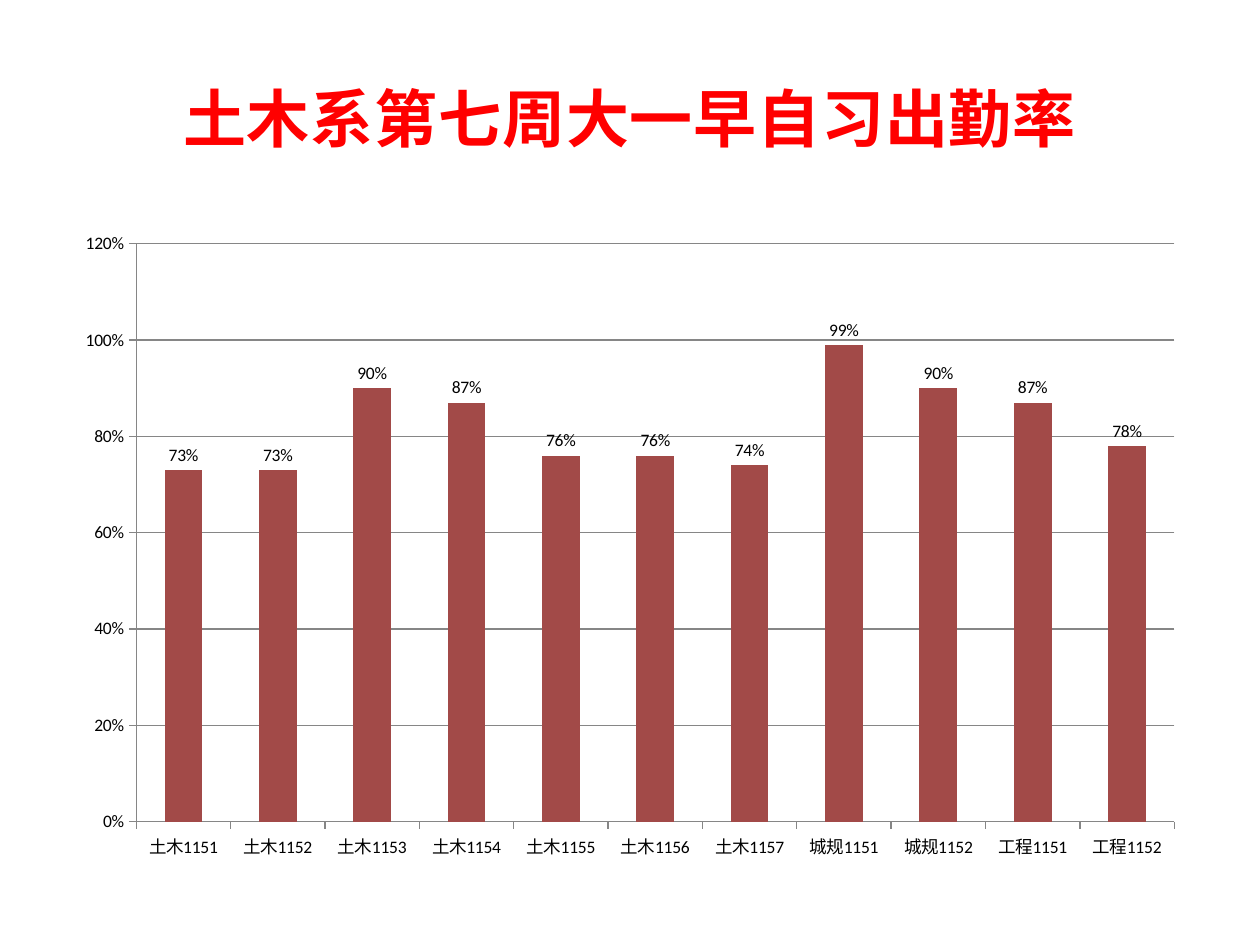
from dataclasses import dataclass

from pptx import Presentation
from pptx import util as u
from pptx.chart.data import CategoryChartData
from pptx.dml.color import RGBColor
from pptx.enum import chart as ch, text

SCALE = u.Inches(1) / 126


@dataclass(frozen=True)
class Theme:
    title: str = "FF0000"
    bar: str = "A24A48"
    grid: str = "868686"
    ink: str = "000000"
    head: str = "Cambria"
    body: str = "Calibri"
    big: int = 36
    small: int = 10


THEME = Theme()
RATES = {
    "土木": (0.73, 0.73, 0.9, 0.87, 0.76, 0.76, 0.74),
    "城规": (0.99, 0.9),
    "工程": (0.87, 0.78),
}


def px(*sizes):
    return [u.Emu(round(size * SCALE)) for size in sizes]


def style(font, face, size, color):
    font.name = face
    font.size = u.Pt(size)
    font.color.rgb = RGBColor.from_string(color)


def rule(line):
    line.color.rgb = RGBColor.from_string(THEME.grid)
    line.width = u.Pt(0.75)


def add_title(slide, words, box):
    frame = slide.shapes.add_textbox(*px(*box)).text_frame
    frame.word_wrap = True
    frame.vertical_anchor = text.MSO_ANCHOR.MIDDLE
    para = frame.paragraphs[0]
    para.alignment = text.PP_ALIGN.CENTER
    run = para.add_run()
    run.text = words
    style(para.font, THEME.head, THEME.big, THEME.title)
    para.font.bold = True
    run.font._element.set("spc", "50")


def rate_data():
    """Number the classes of each major from 1151 upwards."""
    data = CategoryChartData(number_format="0%")
    data.categories = [f"{major}{1151 + i}"
                       for major, rates in RATES.items()
                       for i in range(len(rates))]
    data.add_series("出勤率", [rate for rates in RATES.values() for rate in rates])
    return data


def add_bars(slide, box):
    chart = slide.shapes.add_chart(
        ch.XL_CHART_TYPE.COLUMN_CLUSTERED, *px(*box), rate_data()).chart
    chart.has_legend = False
    chart.has_title = False
    style(chart.font, THEME.body, THEME.small, THEME.ink)

    for axis in (chart.category_axis, chart.value_axis):
        axis.major_tick_mark = ch.XL_TICK_MARK.OUTSIDE
        axis.minor_tick_mark = ch.XL_TICK_MARK.NONE
        rule(axis.format.line)
    scale = chart.value_axis
    scale.minimum_scale, scale.maximum_scale, scale.major_unit = 0, 1.2, 0.2
    scale.tick_labels.number_format = "0%"
    scale.tick_labels.number_format_is_linked = False
    scale.has_major_gridlines = True
    rule(scale.major_gridlines.format.line)

    plot = chart.plots[0]
    plot.gap_width = 150
    plot.vary_by_categories = False
    fill = plot.series[0].format.fill
    fill.solid()
    fill.fore_color.rgb = RGBColor.from_string(THEME.bar)
    plot.has_data_labels = True
    labels = plot.data_labels
    labels.show_value = True
    labels.number_format = "0%"
    labels.number_format_is_linked = False
    labels.position = ch.XL_LABEL_POSITION.OUTSIDE_END
    style(labels.font, THEME.body, THEME.small, THEME.ink)


def main():
    deck = Presentation()
    deck.slide_width, deck.slide_height = px(1260, 945)
    slide = deck.slides.add_slide(deck.slide_layouts[6])
    add_title(slide, "土木系第七周大一早自习出勤率", (63, 38, 1134, 158))
    add_bars(slide, (63, 221, 1134, 651))
    deck.save("out.pptx")


if __name__ == "__main__":
    main()
